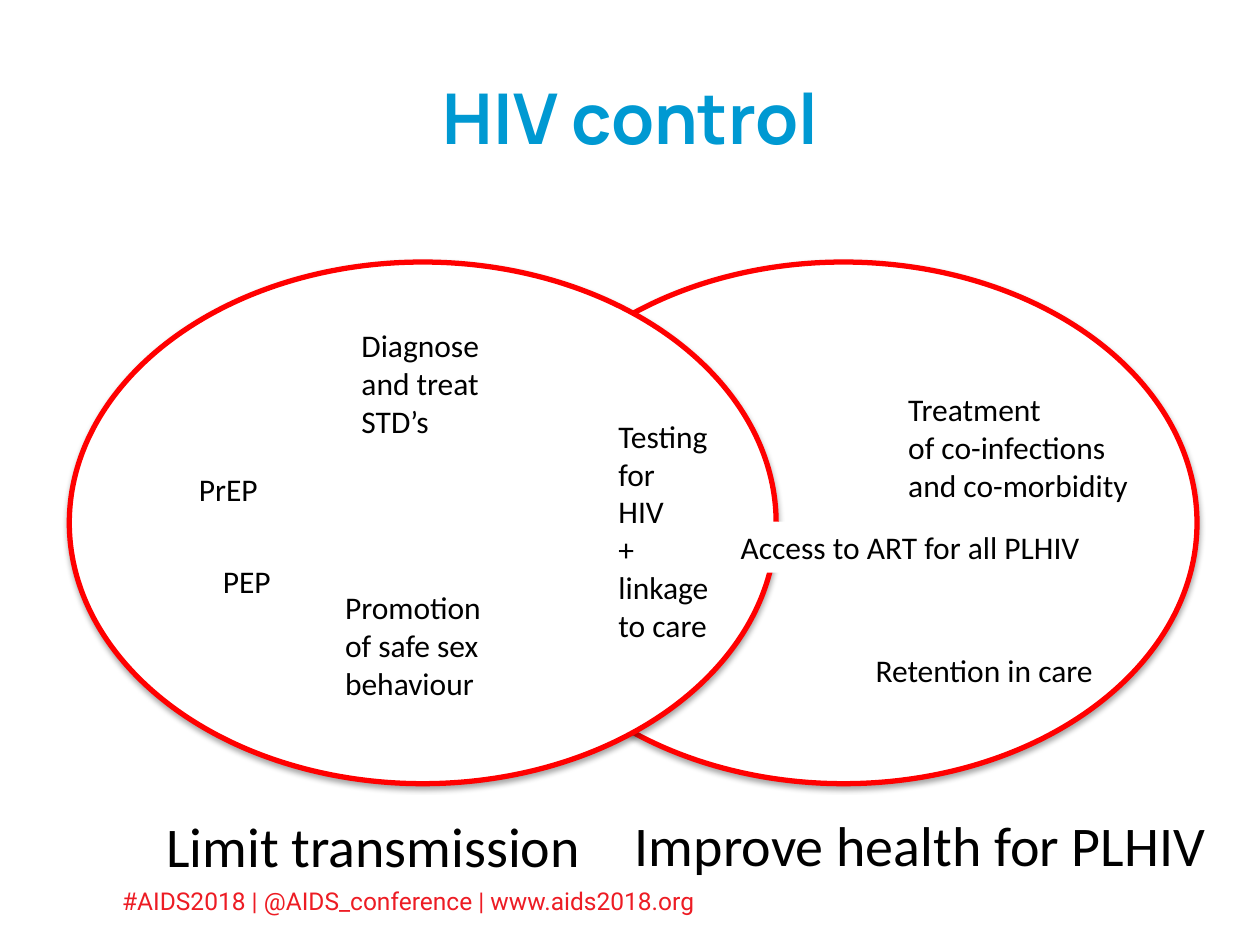
from dataclasses import dataclass

from lxml.etree import SubElement
from pptx import Presentation
from pptx.dml.color import RGBColor
from pptx.enum.shapes import MSO_SHAPE
from pptx.enum.text import MSO_ANCHOR, MSO_AUTO_SIZE, PP_ALIGN
from pptx.oxml.ns import qn
from pptx.util import Inches, Pt

CELL = 0.1  # inches; the slide is a grid of 100 columns by 75 rows
TITLE_ONLY = 5


@dataclass(frozen=True)
class Theme:
    blue: str = "0099D2"
    red: str = "FF0000"
    footer_red: str = "ED1C24"
    black: str = "000000"
    white: str = "FFFFFF"
    title_font: str = "Manrope"
    body_font: str = "Calibri"
    footer_font: str = "Roboto"
    title_size: int = 40
    heading_size: int = 32
    label_size: int = 18
    footer_size: int = 14
    outline: int = 3


THEME = Theme()


def colour(value):
    return RGBColor.from_string(value)


def grid(*cells):
    return [Inches(cell * CELL) for cell in cells]


def style_text(frame, font, size, value, bold=False):
    for para in frame.paragraphs:
        for span in para.runs:
            span.font.name = font
            span.font.size = Pt(size)
            span.font.bold = bold
            span.font.color.rgb = colour(value)


def add_soft_shadow(shape):
    """Give the shape a faint shadow that falls straight down."""
    shape.shadow.inherit = False
    effects = shape._element.spPr.find(qn("a:effectLst"))
    shadow = SubElement(effects, qn("a:outerShdw"), blurRad=str(Pt(3.1)),
                        dist=str(Pt(1.8)), dir="5400000", rotWithShape="0")
    tint = SubElement(shadow, qn("a:srgbClr"), val=THEME.black)
    SubElement(tint, qn("a:alpha"), val="35000")


def set_title(page, text):
    title = page.shapes.title
    title.left, title.top, title.width, title.height = grid(6.2, 3, 87.7, 12.5)
    frame = title.text_frame
    frame.text = text
    frame.vertical_anchor = MSO_ANCHOR.MIDDLE
    frame.paragraphs[0].alignment = PP_ALIGN.CENTER
    style_text(frame, THEME.title_font, THEME.title_size, THEME.blue, bold=True)


def add_footer(page, text):
    box = page.shapes.add_textbox(*grid(8.7, 69.8, 74.9, 3.4))
    frame = box.text_frame
    frame.word_wrap = True
    frame.text = text
    style_text(frame, THEME.footer_font, THEME.footer_size, THEME.footer_red)


def add_circle(page, left):
    circle = page.shapes.add_shape(MSO_SHAPE.OVAL, *grid(left, 20.8, 56.1, 41.4))
    circle.fill.solid()
    circle.fill.fore_color.rgb = colour(THEME.white)
    circle.line.color.rgb = colour(THEME.red)
    circle.line.width = Pt(THEME.outline)
    add_soft_shadow(circle)


def add_label(page, text, left, top, width, size=THEME.label_size):
    """Place unwrapped text, one paragraph a line, in a box as high as its lines."""
    line_rows = 1.22 * size / 72 / CELL
    height = 1 + line_rows * len(text.split("\n"))
    box = page.shapes.add_textbox(*grid(left, top, width, height))
    frame = box.text_frame
    frame.word_wrap = False
    frame.auto_size = MSO_AUTO_SIZE.SHAPE_TO_FIT_TEXT
    frame.text = text
    style_text(frame, THEME.body_font, size, THEME.black)
    return box


def main():
    deck = Presentation()
    deck.slide_width, deck.slide_height = grid(100, 75)
    page = deck.slides.add_slide(deck.slide_layouts[TITLE_ONLY])

    add_footer(page, "#AIDS2018 | @AIDS_conference | www.aids2018.org")
    set_title(page, "HIV control")
    for left in (38.9, 5.5):
        add_circle(page, left)

    add_label(page, "Testing\nfor\nHIV\n+\nlinkage\nto care", 48.1, 32.6, 9.2)
    access = add_label(page, "Access to ART for all PLHIV", 57.8, 41.4, 29.2)
    access.fill.solid()
    access.fill.fore_color.rgb = colour(THEME.white)

    for text, left, top, width in (
        ("Treatment\nof co-infections\nand co-morbidity", 71.1, 30.5, 19.7),
        ("PrEP", 14.8, 36.8, 6.7),
        ("Promotion\nof safe sex\nbehaviour", 26.4, 46.2, 12.9),
        ("Diagnose\nand treat\nSTD’s", 27.7, 25.4, 11.5),
        ("Retention in care", 68.5, 51.2, 19.5),
        ("PEP", 16.7, 44.1, 5.8),
    ):
        add_label(page, text, left, top, width)

    add_label(page, "Limit transmission", 12.2, 63.9, 35.3, THEME.heading_size)
    add_label(page, "Improve health for PLHIV", 49.4, 63.8, 47.8, THEME.heading_size)

    deck.save("out.pptx")


if __name__ == "__main__":
    main()
